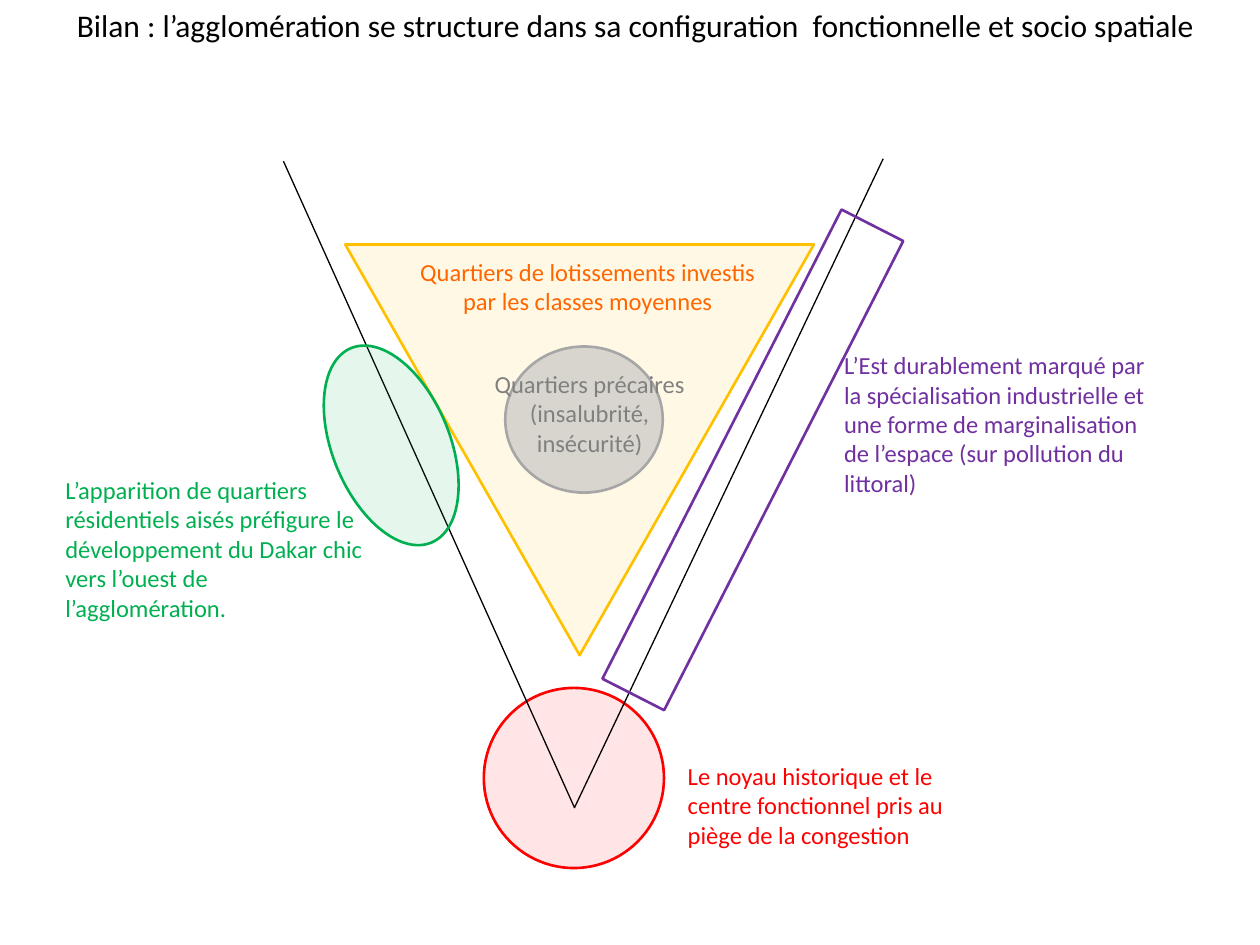
from dataclasses import dataclass

from lxml.etree import SubElement
from pptx import Presentation
from pptx.dml.color import RGBColor
from pptx.enum.shapes import MSO_SHAPE as Shape
from pptx.enum.text import MSO_ANCHOR as Anchor, MSO_AUTO_SIZE as AutoSize, PP_ALIGN as Align
from pptx.oxml.ns import qn
from pptx.util import Inches, Pt


@dataclass(frozen=True)
class Theme:
    font: str = "Calibri"
    title_size: int = 18
    label_size: int = 14
    outline: float = 1.5
    axis_line: float = 0.75
    black: str = "000000"
    red: str = "FF0000"
    green: str = "00B050"
    purple: str = "7030A0"
    gold: str = "FFC000"
    orange: str = "FF6600"
    gray_fill: str = "BFBFBF"
    gray_line: str = "A6A6A6"
    gray_text: str = "808080"


def write_text(frame, text, *, font, size, color, align=Align.LEFT, wrap=True):
    frame.word_wrap = wrap
    frame.auto_size = AutoSize.NONE
    frame.vertical_anchor = Anchor.TOP
    para = frame.paragraphs[0]
    para.alignment = align
    span = para.add_run()
    span.text = text
    span.font.name = font
    span.font.size = Pt(size)
    span.font.color.rgb = RGBColor.from_string(color)


class SchemaSlide:
    def __init__(self, deck, theme):
        self.theme = theme
        self.page = deck.slides.add_slide(deck.slide_layouts[5])

    def title(self, text, left, top, width, height):
        box = self.page.shapes.title
        box.left, box.top = Inches(left), Inches(top)
        box.width, box.height = Inches(width), Inches(height)
        write_text(box.text_frame, text, font=self.theme.font,
                   size=self.theme.title_size, color=self.theme.black, wrap=False)

    def label(self, text, left, top, width, height, color, align=Align.LEFT):
        box = self.page.shapes.add_textbox(
            Inches(left), Inches(top), Inches(width), Inches(height))
        write_text(box.text_frame, text, font=self.theme.font,
                   size=self.theme.label_size, color=color, align=align)

    def zone(self, kind, left, top, width, height, line, fill=None, opacity=10, rotation=0):
        """Draw an outlined area; opacity is a percentage, and no fill leaves it hollow."""
        area = self.page.shapes.add_shape(
            kind, Inches(left), Inches(top), Inches(width), Inches(height))
        area.rotation = rotation
        self.outline(area, line, self.theme.outline)
        if fill:
            area.fill.solid()
            area.fill.fore_color.rgb = RGBColor.from_string(fill)
            color = area.fill._xPr.find(qn("a:solidFill"))[0]
            SubElement(color, qn("a:alpha"), val=str(opacity * 1000))

    def open_path(self, points, color):
        start, *others = [(Inches(x), Inches(y)) for x, y in points]
        builder = self.page.shapes.build_freeform(*start)
        builder.add_line_segments(others, close=False)
        self.outline(builder.convert_to_shape(), color, self.theme.axis_line)

    def outline(self, shape, color, width):
        shape.shadow.inherit = False
        shape.fill.background()
        shape.line.color.rgb = RGBColor.from_string(color)
        shape.line.width = Pt(width)


def main():
    deck = Presentation()
    deck.slide_width, deck.slide_height = Inches(10), Inches(7.5)
    theme = Theme()
    schema = SchemaSlide(deck, theme)

    schema.title("Bilan : l’agglomération se structure dans sa configuration  "
                 "fonctionnelle et socio spatiale", 0.51, 0, 9.24, 0.4)

    schema.zone(Shape.ISOSCELES_TRIANGLE, 2.74, 1.94, 3.72, 3.26,
                theme.gold, fill=theme.gold, rotation=180)

    schema.zone(Shape.OVAL, 3.84, 5.46, 1.43, 1.43, theme.red, fill=theme.red)
    schema.open_path([(2.25, 1.28), (4.56, 6.41), (7.01, 1.26)], theme.black)
    schema.label("Le noyau historique et le centre fonctionnel pris au piège de la congestion",
                 5.36, 5.99, 2.62, 0.81, theme.red)

    schema.zone(Shape.RECTANGLE, 5.7, 1.56, 0.55, 4.18, theme.purple, rotation=27)
    schema.label("L’Est durablement marqué par la spécialisation industrielle et une forme "
                 "de marginalisation de l’espace (sur pollution du littoral)",
                 6.6, 2.73, 2.62, 1.28, theme.purple)

    schema.zone(Shape.OVAL, 4.01, 2.75, 1.25, 1.16,
                theme.gray_line, fill=theme.gray_fill, opacity=60)
    schema.label("Quartiers précaires (insalubrité, insécurité)",
                 3.81, 2.88, 1.74, 0.81, theme.gray_text, Align.CENTER)
    schema.label("Quartiers de lotissements investis par les classes moyennes",
                 3.2, 1.99, 2.93, 0.57, theme.orange, Align.CENTER)

    schema.zone(Shape.OVAL, 2.64, 2.7, 0.93, 1.67,
                theme.green, fill=theme.green, rotation=337.6)
    schema.label("L’apparition de quartiers résidentiels aisés préfigure le développement "
                 "du Dakar chic vers l’ouest de l’agglomération.",
                 0.42, 3.72, 2.62, 1.28, theme.green)

    deck.save("out.pptx")


if __name__ == "__main__":
    main()
